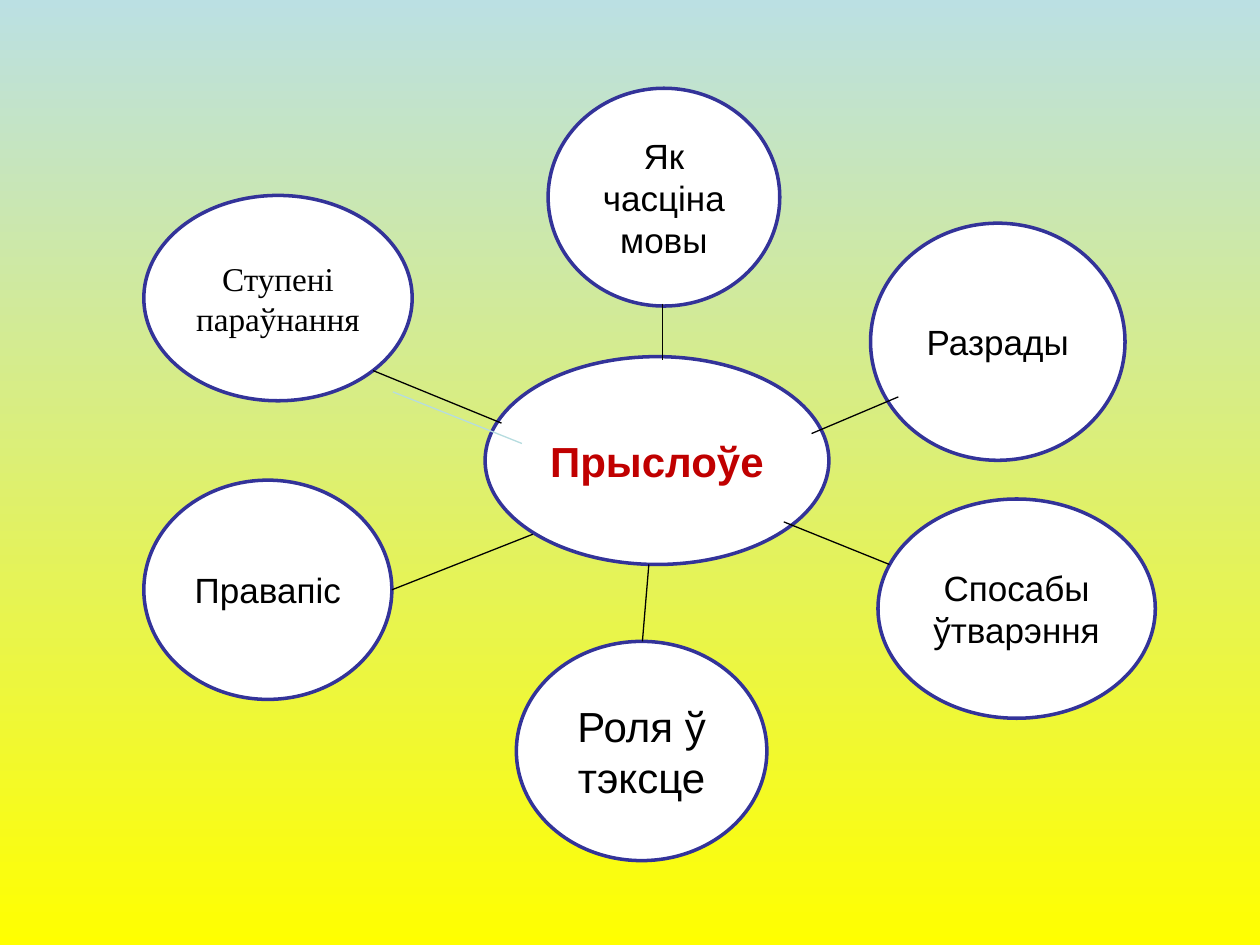
from lxml.etree import SubElement
from pptx import Presentation
from pptx.dml.color import RGBColor
from pptx.enum.shapes import MSO_CONNECTOR, MSO_SHAPE
from pptx.enum.text import MSO_ANCHOR, PP_ALIGN
from pptx.oxml.ns import qn
from pptx.util import Cm, Pt

HUE = {"sky": "BBE0E3", "sun": "FFFF00", "fill": "FFFFFF", "rim": "333399",
       "core": "C00000", "ink": "000000", "pale": "B6DCDF"}
SANS, SERIF = "Arial", "Times New Roman"

# Box in cm within the map, lines of text, size, font, colour, bold
NODES = [
    ((6.88, 5.41, 6.93, 4.19), ["Прыслоўе"], 24, SANS, "core", True),
    ((8.15, 0, 4.67, 4.39), ["Як часціна мовы"], 20, SANS, "ink", False),
    ((14.65, 2.72, 5.13, 4.78), ["Разрады"], 20, SANS, "ink", False),
    ((14.8, 8.28, 5.59, 4.42), ["Спосабы ўтварэння"], 20, SANS, "ink", False),
    ((7.51, 11.15, 5.05, 4.42), ["Роля ў тэксце"], 24, SANS, "ink", False),
    ((0, 7.9, 5, 4.42), ["Правапіс"], 20, SANS, "ink", False),
    ((0, 2.16, 5.41, 4.14), ["Ступені", "параўнання"], 19, SERIF, "ink", False),
]

# Start and end in cm within the map, colour
LINKS = [
    ((4.62, 5.69), (7.21, 6.75), "ink"),
    ((5.02, 6.12), (7.62, 7.16), "pale"),
    ((5, 10.11), (7.84, 8.99), "ink"),
    ((10.18, 9.6), (10.05, 11.15), "ink"),
    ((10.46, 4.34), (10.46, 5.48), "ink"),
    ((13.46, 6.96), (15.21, 6.22), "ink"),
    ((12.9, 8.74), (15.03, 9.6), "ink"),
]


def tint(name):
    return RGBColor.from_string(HUE[name])


def paint_back(slide):
    fill = slide.background.fill
    fill.gradient()
    fill.gradient_angle = 270  # counter-clockwise, so top to bottom
    for stop, name in zip(fill.gradient_stops, ("sky", "sun")):
        stop.color.rgb = tint(name)


def add_node(slide, box, lines, size, face, hue, bold):
    oval = slide.shapes.add_shape(MSO_SHAPE.OVAL, *(Cm(v) for v in box))
    oval.shadow.inherit = False
    oval.fill.solid()
    oval.fill.fore_color.rgb = tint("fill")
    oval.line.color.rgb = tint("rim")
    oval.line.width = Pt(2)
    frame = oval.text_frame
    frame.word_wrap = True
    frame.vertical_anchor = MSO_ANCHOR.MIDDLE
    for i, line in enumerate(lines):
        para = frame.add_paragraph() if i else frame.paragraphs[0]
        para.alignment = PP_ALIGN.CENTER
        run = para.add_run()
        run.text = line
        font = run.font
        font.name, font.size, font.bold = face, Pt(size), bold
        font.color.rgb = tint(hue)


def add_link(slide, start, end, hue):
    link = slide.shapes.add_connector(
        MSO_CONNECTOR.STRAIGHT, *(Cm(v) for v in (*start, *end)))
    link.line.color.rgb = tint(hue)
    link.line.width = Pt(0.75)
    SubElement(link._element.spPr, qn("a:effectLst"))


def add_map(slide, left, top):
    """Draw the word map with its top left corner at the given point in cm."""
    for (x, y, wide, high), *text in NODES:
        add_node(slide, (left + x, top + y, wide, high), *text)
    for start, end, hue in LINKS:
        ends = [(left + x, top + y) for x, y in (start, end)]
        add_link(slide, *ends, hue)


def main():
    deck = Presentation()
    deck.slide_width, deck.slide_height = Cm(25.4), Cm(19.05)
    slide = deck.slides.add_slide(deck.slide_layouts[6])
    paint_back(slide)
    add_map(slide, 2.9, 1.78)
    deck.save("out.pptx")


if __name__ == "__main__":
    main()
